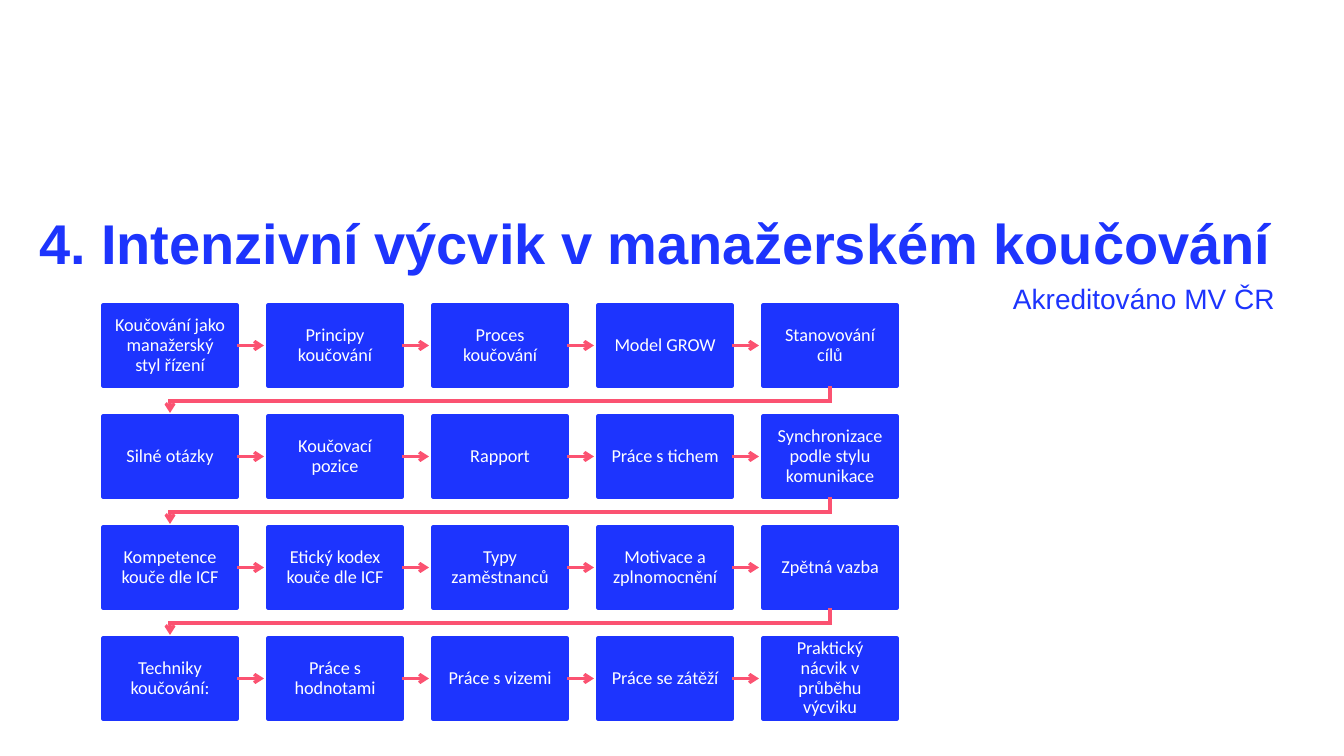
from pptx import Presentation, util as u
from pptx.dml.color import RGBColor
from pptx.enum import shapes, text
from pptx.oxml.ns import qn
from lxml import etree

PX = 9071.43  # EMU per px
BLUE = RGBColor(0x1D, 0x34, 0xFE)
TEXT_BLUE = RGBColor(0x1D, 0x34, 0xFD)
PINK = RGBColor(0xFB, 0x52, 0x71)
WHITE = RGBColor(0xFF, 0xFF, 0xFF)

LEFT, TOP = 103, 305
BOX_W, BOX_H = 134, 81
STEP_X, STEP_Y = 165, 111
ARROW = 27

ROWS = [
    ["Koučování jako manažerský styl řízení", "Principy koučování",
     "Proces koučování", "Model GROW", "Stanovování cílů"],
    ["Silné otázky", "Koučovací pozice", "Rapport", "Práce s tichem",
     "Synchronizace podle stylu komunikace"],
    ["Kompetence kouče dle ICF", "Etický kodex kouče dle ICF",
     "Typy zaměstnanců", "Motivace a zplnomocnění", "Zpětná vazba"],
    ["Techniky koučování:", "Práce s hodnotami", "Práce s vizemi",
     "Práce se zátěží", "Praktický nácvik v průběhu výcviku"],
]


def px(*lengths):
    return [u.Emu(round(n * PX)) for n in lengths]


def write(sp, words, font="Arial", size=20, color=TEXT_BLUE, bold=False,
          align=text.PP_ALIGN.LEFT, anchor=text.MSO_ANCHOR.MIDDLE,
          spacing=0.9, wrap=True, inset=(10, 5)):
    tf = sp.text_frame
    tf.word_wrap = wrap
    tf.auto_size = text.MSO_AUTO_SIZE.NONE
    tf.vertical_anchor = anchor
    tf.margin_left, tf.margin_top = tf.margin_right, tf.margin_bottom = px(*inset)
    p = tf.paragraphs[0]
    p.alignment, p.line_spacing = align, spacing
    r = p.add_run()
    r.text = words
    r.font.name, r.font.size, r.font.bold = font, u.Pt(size), bold
    r.font.color.rgb = color


prs = Presentation()
prs.slide_width, prs.slide_height = px(1344, 756)
s = prs.slides.add_slide(prs.slide_layouts[5])

title = s.shapes.title
title.left, title.top, title.width, title.height = px(29, 193, 1299, 106)
write(title, "4. Intenzivní výcvik v manažerském koučování", size=40, bold=True)

arrows = []
for row, labels in enumerate(ROWS):
    y = TOP + row * STEP_Y
    for col, label in enumerate(labels):
        x = LEFT + col * STEP_X
        box = s.shapes.add_shape(shapes.MSO_SHAPE.RECTANGLE, *px(x, y, BOX_W, BOX_H))
        box.shadow.inherit = False
        box.fill.solid()
        box.fill.fore_color.rgb = BLUE
        box.line.color.rgb = BLUE
        box.line.width = u.Pt(2.25)
        write(box, label, font="Calibri", size=13, color=WHITE,
              align=text.PP_ALIGN.CENTER, inset=(10, 10))
        if col < len(labels) - 1:
            middle = box.top + box.height // 2
            start, end = px(x + BOX_W, x + BOX_W + ARROW)
            link = s.shapes.add_connector(shapes.MSO_CONNECTOR.STRAIGHT,
                                          start, middle, end, middle)
            link.begin_connect(box, 3)
            etree.SubElement(link._element.spPr, qn("a:effectLst"))
            arrows.append(link)

    if row < len(ROWS) - 1:
        bottom = y + BOX_H
        first = LEFT + BOX_W // 2
        last = first + (len(labels) - 1) * STEP_X
        path = s.shapes.build_freeform(last, bottom, scale=PX)
        path.add_line_segments([(last, bottom + 15), (first, bottom + 15),
                                (first, bottom + ARROW)], close=False)
        turn = path.convert_to_shape()
        turn.shadow.inherit = False
        turn.fill.background()
        arrows.append(turn)

for arrow in arrows:
    arrow.line.color.rgb = PINK
    arrow.line.width = u.Pt(2.25)
    ln = arrow.line._get_or_add_ln()
    etree.SubElement(ln, qn("a:miter"), lim="800000")
    etree.SubElement(ln, qn("a:tailEnd"), type="arrow")

note = s.shapes.add_textbox(*px(1003, 276, 284, 44))
write(note, "Akreditováno MV ČR", anchor=text.MSO_ANCHOR.TOP, spacing=1.0, wrap=False)

prs.save("out.pptx")
